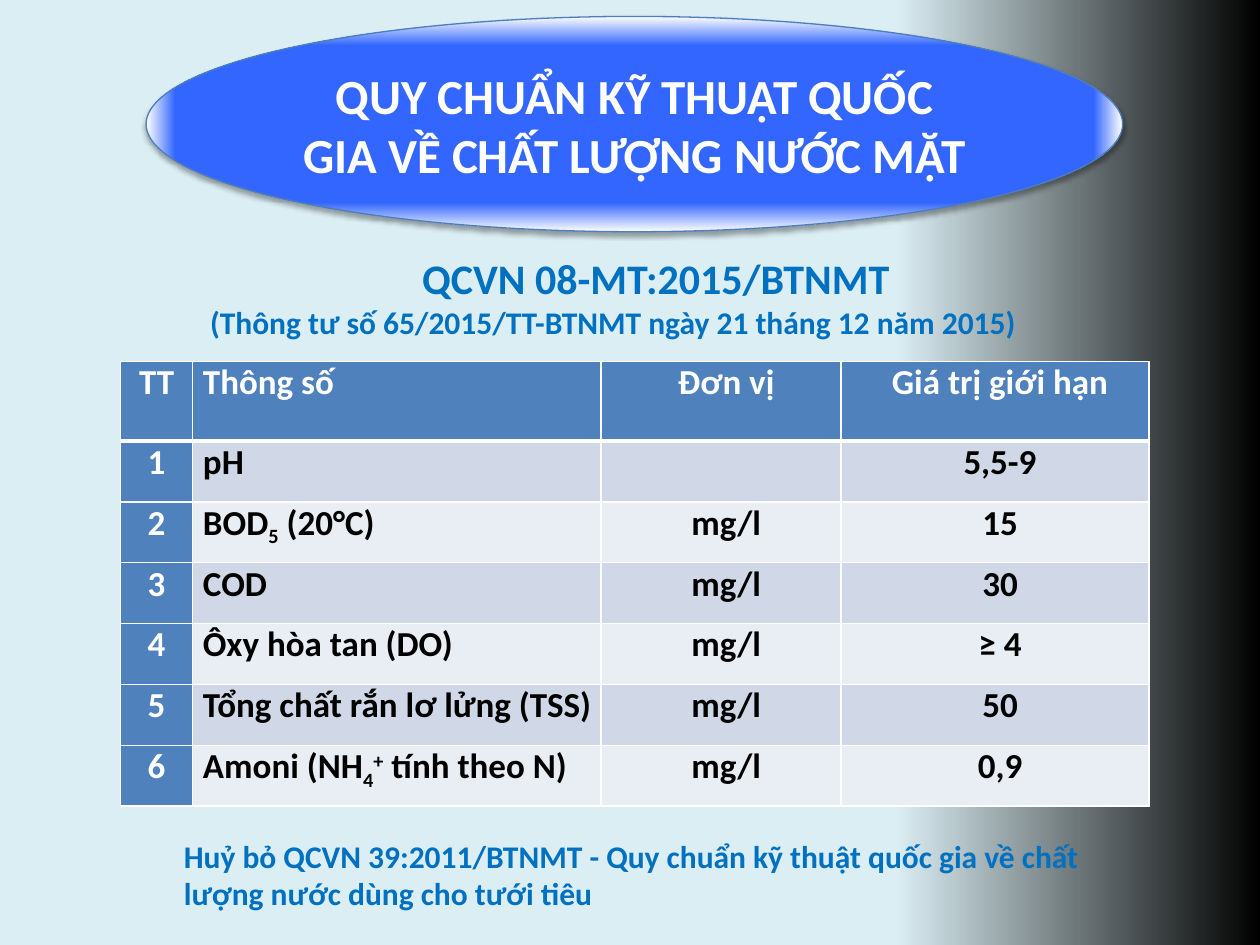
import pptx
import pptx.util
import pptx.dml.color
import pptx.enum.shapes
import pptx.enum.text
import pptx.oxml
import pptx.oxml.ns

Pt = pptx.util.Pt
RGB = pptx.dml.color.RGBColor
ALIGN = pptx.enum.text.PP_ALIGN
MID = pptx.enum.text.MSO_ANCHOR.MIDDLE

PALE = RGB(0xDB, 0xEE, 0xF4)
BLACK = RGB(0, 0, 0)
WHITE = RGB(255, 255, 255)
ROYAL = RGB(0x33, 0x66, 0xFF)
EDGE = RGB(0x4B, 0x7E, 0xBC)
BLUE = RGB(0x00, 0x70, 0xC0)
HEAD = RGB(0x4F, 0x81, 0xBD)
BANDS = RGB(0xD0, 0xD8, 0xE8), RGB(0xE9, 0xED, 0xF4)

SUB, SUPER = -25000, 30000
COLS = 41, 233.5, 137, 176
TOP_ROW, ROW = 45.4, 34.8
LABELS = "TT", "Thông số", "Đơn vị", "Giá trị giới hạn"
LIMITS = (
    ([("pH", 0)], "", "5,5-9"),
    ([("BOD", 0), ("5", SUB), (" (20°C)", 0)], "mg/l", "15"),
    ([("COD", 0)], "mg/l", "30"),
    ([("Ôxy hòa tan (DO)", 0)], "mg/l", "≥ 4"),
    ([("Tổng chất rắn lơ lửng (TSS)", 0)], "mg/l", "50"),
    ([("Amoni (NH", 0), ("4", SUB), ("+", SUPER), (" tính theo N)", 0)], "mg/l", "0,9"),
)


def style(para, size, color, align=ALIGN.LEFT):
    """Set the bold font and alignment of a paragraph."""
    para.alignment = align
    font = para.font
    font.name, font.size, font.bold = "Calibri", Pt(size), True
    font.color.rgb = color


def blend(fill, stops):
    """Fill with a two-stop gradient running left to right."""
    fill.gradient()
    fill.gradient_angle = 0
    for stop, (place, color) in zip(fill.gradient_stops, stops):
        stop.position = place
        stop.color.rgb = color


def add_banner(slide, text, left, top, width, height):
    """Draw the oval and set the slide title inside it."""
    oval = slide.shapes.add_shape(
        pptx.enum.shapes.MSO_SHAPE.OVAL, Pt(left), Pt(top), Pt(width), Pt(height))
    blend(oval.fill, ((0.73, ROYAL), (1, WHITE)))
    line = oval._element.spPr.find(".//" + pptx.oxml.ns.qn("a:lin"))
    line.getparent().replace(line, pptx.oxml.parse_xml(
        f'<a:path {pptx.oxml.ns.nsdecls("a")} path="shape">'
        '<a:fillToRect l="50000" t="50000" r="50000" b="50000"/></a:path>'))
    oval.line.color.rgb = EDGE
    oval.line.width = Pt(0.75)

    title = slide.shapes.title
    slide.shapes._spTree.append(title._element)
    inset = 0.146
    title.left, title.top = Pt(left + width * inset), Pt(top + height * inset)
    title.width = Pt(width * (1 - 2 * inset))
    title.height = Pt(height * (1 - 2 * inset))
    frame = title.text_frame
    frame.auto_size = pptx.enum.text.MSO_AUTO_SIZE.NONE
    frame.word_wrap = True
    frame.vertical_anchor = MID
    frame.text = text
    style(frame.paragraphs[0], 28, WHITE, ALIGN.CENTER)


def add_note(slide, lines, left, top, width, height):
    """Add a blue text box with one paragraph for each line."""
    frame = slide.shapes.add_textbox(Pt(left), Pt(top), Pt(width), Pt(height)).text_frame
    frame.word_wrap = True
    frame.text = "\n".join(text for text, _, _ in lines)
    for para, (_, size, align) in zip(frame.paragraphs, lines):
        style(para, size, BLUE, align)


def set_edges(cell, row):
    """Draw white cell borders, thicker below the header row."""
    props = cell._tc.get_or_add_tcPr()
    thick = {"T": 3 if row == 1 else 1, "B": 3 if row == 0 else 1}
    for side in "LRTB":
        props.append(pptx.oxml.parse_xml(
            f'<a:ln{side} {pptx.oxml.ns.nsdecls("a")} w="{Pt(thick.get(side, 1))}">'
            f'<a:solidFill><a:srgbClr val="{WHITE}"/></a:solidFill></a:ln{side}>'))


def fill_cell(cell, row, col, parts):
    """Write and format one table cell."""
    set_edges(cell, row)
    key = row == 0 or col == 0
    cell.fill.solid()
    cell.fill.fore_color.rgb = HEAD if key else BANDS[(row - 1) % 2]
    cell.margin_left = cell.margin_right = cell.margin_top = cell.margin_bottom = 0
    para = cell.text_frame.paragraphs[0]
    style(para, 20, WHITE if key else BLACK, ALIGN.LEFT if col == 1 else ALIGN.CENTER)
    para.space_before = Pt(6)
    if col:
        para._p.get_or_add_pPr().set("marL", str(Pt(6)))
    for text, base in parts:
        run = para.add_run()
        run.text = text
        if base:
            run.font._element.set("baseline", str(base))


def add_limits(slide, left, top):
    """Add the table of limit values."""
    count = len(LIMITS) + 1
    table = slide.shapes.add_table(
        count, len(COLS), Pt(left), Pt(top),
        Pt(sum(COLS)), Pt(TOP_ROW + ROW * len(LIMITS))).table
    for col, width in zip(table.columns, COLS):
        col.width = Pt(width)
    for num, row in enumerate(table.rows):
        row.height = Pt(ROW if num else TOP_ROW)
    body = [(str(num), *item) for num, item in enumerate(LIMITS, 1)]
    for row, items in enumerate([LABELS, *body]):
        for col, item in enumerate(items):
            if isinstance(item, str):
                item = [(item, 0)] if item else []
            fill_cell(table.cell(row, col), row, col, item)


def main():
    """Build and save the slide."""
    deck = pptx.Presentation()
    deck.slide_width, deck.slide_height = Pt(720), Pt(540)
    slide = deck.slides.add_slide(deck.slide_layouts[5])
    blend(slide.background.fill, ((0.71, PALE), (1, BLACK)))
    add_banner(slide, "QUY CHUẨN KỸ THUẬT QUỐC GIA VỀ CHẤT LƯỢNG NƯỚC MẶT ",
               83.5, 9.4, 558, 123)
    add_limits(slide, 69, 206.6)
    add_note(slide, (
        ("QCVN 08-MT:2015/BTNMT ", 24, ALIGN.CENTER),
        ("(Thông tư số 65/2015/TT-BTNMT ngày 21 tháng 12 năm 2015)", 18, ALIGN.LEFT),
    ), 113, 141, 529, 58)
    add_note(slide, (
        ("Huỷ bỏ QCVN 39:2011/BTNMT - Quy chuẩn kỹ thuật quốc gia về chất lượng "
         "nước dùng cho tưới tiêu", 18, ALIGN.LEFT),
    ), 98, 474.5, 529, 51)
    deck.save("out.pptx")


if __name__ == "__main__":
    main()
